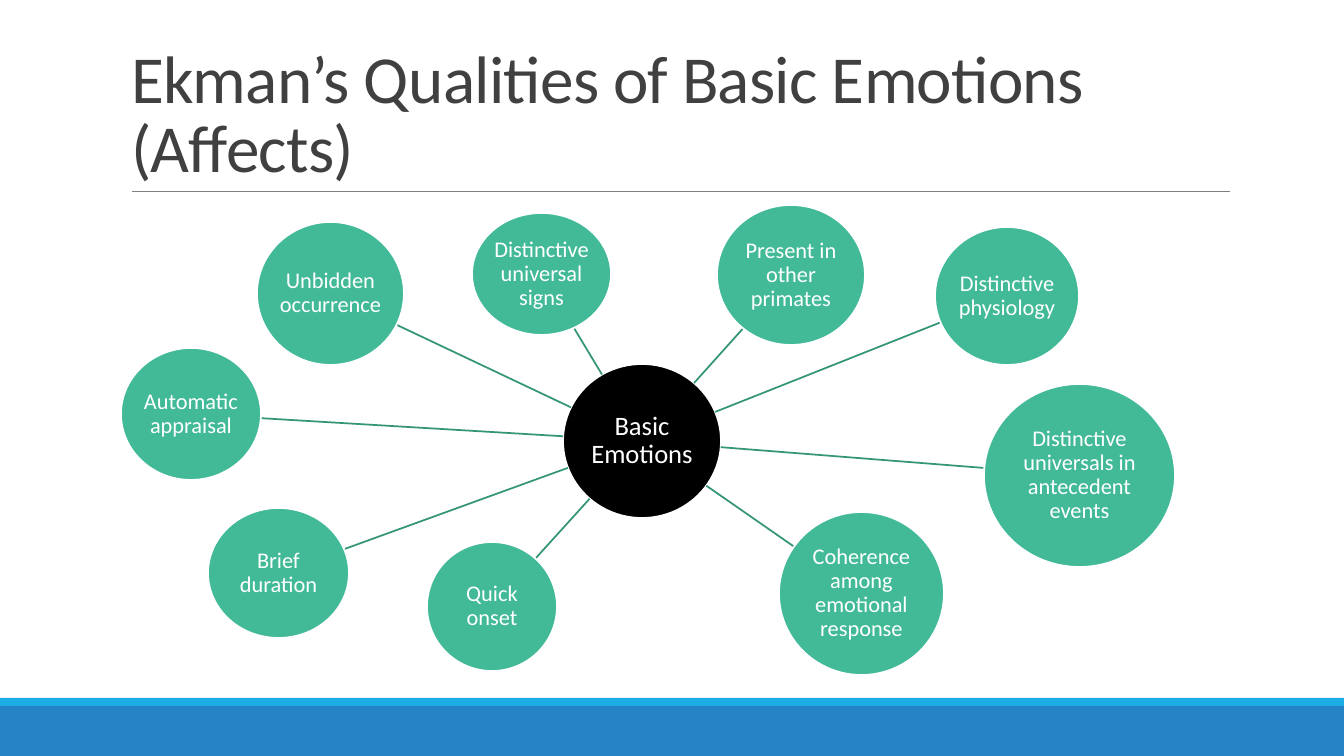
import math

from lxml import etree
from pptx import Presentation
from pptx import util as u
from pptx.dml.color import RGBColor
from pptx.enum import shapes, text
from pptx.oxml.ns import qn

SLIDE = (1344, 756)
TITLE = "Ekman’s Qualities of Basic Emotions (Affects)"
TITLE_BOX = (121, 31, 1109, 160)
TITLE_RULE = ((132, 191), (1230, 191))
BARS = [("bar", (0, 706, 1344, 50)), ("stripe", (0, 698, 1344, 8))]

# label, (left, top, width, height) in px
HUB = ("Basic Emotions", (563, 364, 158, 154))
QUALITIES = [
    ("Distinctive universal signs", (472, 213, 139, 122)),
    ("Present in other primates", (717, 205, 148, 140)),
    ("Distinctive physiology", (935, 227, 144, 138)),
    ("Distinctive universals in antecedent events", (984, 384, 191, 183)),
    ("Coherence among emotional response", (779, 512, 165, 163)),
    ("Quick onset", (427, 542, 130, 129)),
    ("Brief duration", (208, 508, 141, 130)),
    ("Automatic appraisal", (121, 348, 140, 132)),
    ("Unbidden occurrence", (257, 222, 147, 143)),
]

COLORS = {
    "bar": "2683C6", "stripe": "1CADE4", "rule": "808080", "title": "404040",
    "hub": "000000", "quality": "42BA97", "spoke": "359579", "white": "FFFFFF",
}
FONT = "Calibri"
EMU_PER_PX = 12192000 / SLIDE[0]


def px(*lengths):
    return [u.Emu(round(n * EMU_PER_PX)) for n in lengths]


def rgb(name):
    return RGBColor.from_string(COLORS[name])


def write(shape, words, size, color, align, anchor, spacing, inset=None):
    frame = shape.text_frame
    frame.word_wrap = True
    frame.auto_size = text.MSO_AUTO_SIZE.NONE
    frame.vertical_anchor = anchor
    if inset is not None:
        margin, = px(inset)
        frame.margin_left = frame.margin_right = margin
        frame.margin_top = frame.margin_bottom = margin
    paragraph = frame.paragraphs[0]
    paragraph.alignment = align
    paragraph.line_spacing = spacing
    run = paragraph.add_run()
    run.text = words
    run.font.name = FONT
    run.font.size = u.Pt(size)
    run.font.color.rgb = rgb(color)
    return run


def add_filled(slide, kind, box, color, outline=None):
    shape = slide.shapes.add_shape(kind, *px(*box))
    shape.shadow.inherit = False
    shape.fill.solid()
    shape.fill.fore_color.rgb = rgb(color)
    if outline:
        shape.line.color.rgb = rgb(outline)
        shape.line.width = u.Pt(1.25)
    else:
        shape.line.fill.background()
    return shape


def add_line(slide, start, end, color, width):
    line = slide.shapes.add_connector(
        shapes.MSO_CONNECTOR.STRAIGHT, *px(*start, *end))
    line.line.color.rgb = rgb(color)
    line.line.width = u.Pt(width)
    properties = line._element.find(qn("p:spPr"))
    etree.SubElement(properties, qn("a:effectLst"))


def add_circle(slide, label, box, color, size):
    circle = add_filled(slide, shapes.MSO_SHAPE.OVAL, box, color, "white")
    write(circle, label, size=size, color="white", align=text.PP_ALIGN.CENTER,
          anchor=text.MSO_ANCHOR.MIDDLE, spacing=0.9, inset=1)


def center(box):
    left, top, width, height = box
    return left + width / 2, top + height / 2


def edge_point(box, target):
    """Where the ray from the centre of the ellipse in box to target leaves it."""
    x, y = center(box)
    dx, dy = target[0] - x, target[1] - y
    reach = 1 / math.hypot(dx / (box[2] / 2), dy / (box[3] / 2))
    return x + dx * reach, y + dy * reach


def main():
    deck = Presentation()
    deck.slide_width, deck.slide_height = px(*SLIDE)
    slide = deck.slides.add_slide(deck.slide_layouts[5])

    for color, box in BARS:
        add_filled(slide, shapes.MSO_SHAPE.RECTANGLE, box, color)
    add_line(slide, *TITLE_RULE, color="rule", width=0.5)

    title = slide.shapes.title
    title.left, title.top, title.width, title.height = px(*TITLE_BOX)
    heading = write(title, TITLE, size=48, color="title",
                    align=text.PP_ALIGN.LEFT, anchor=text.MSO_ANCHOR.BOTTOM,
                    spacing=0.85)
    heading.font._element.set("spc", "-50")

    hub_label, hub_box = HUB
    add_circle(slide, hub_label, hub_box, "hub", 19)
    for label, box in QUALITIES:
        add_line(slide, edge_point(hub_box, center(box)),
                 edge_point(box, center(hub_box)), color="spoke", width=1.25)
        add_circle(slide, label, box, "quality", 16)

    deck.save("out.pptx")


if __name__ == "__main__":
    main()
